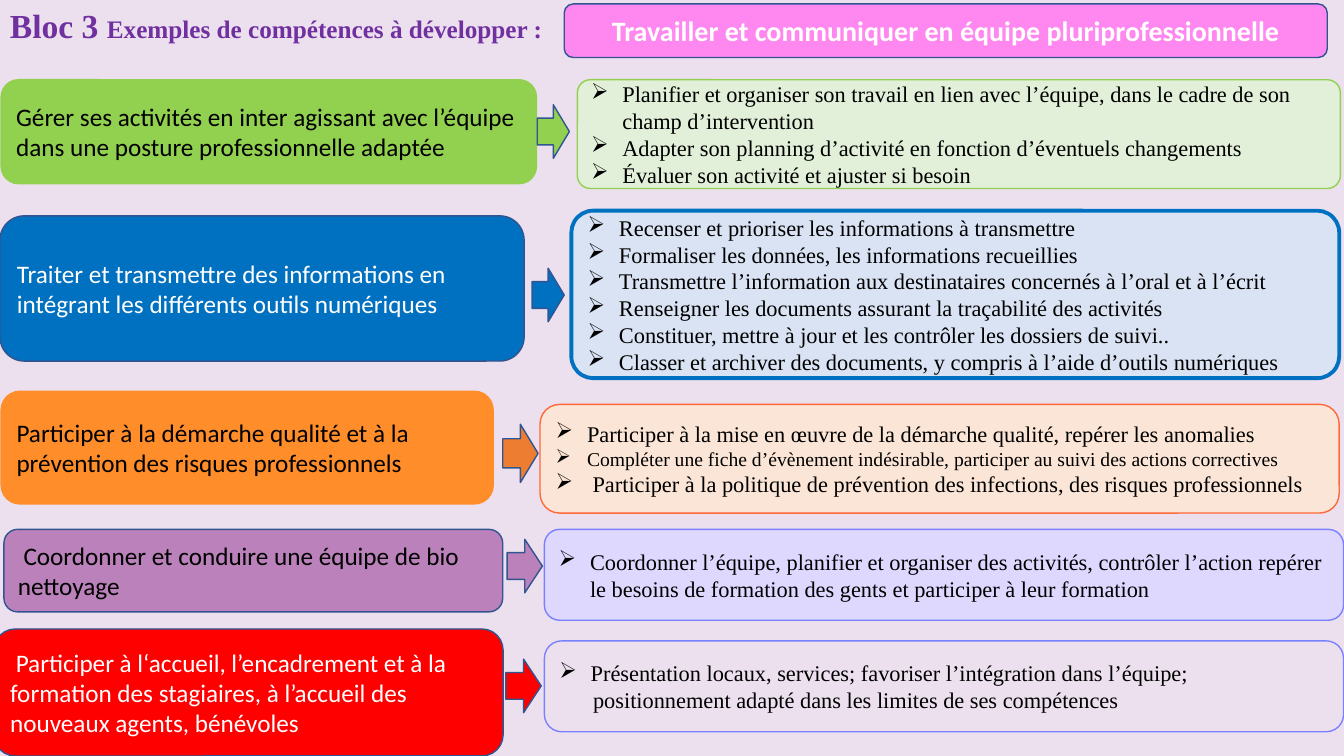
"""Build the Bloc 3 slide: skills on the left, detailed abilities on the right."""
from lxml import etree
from pptx import Presentation, util as u
from pptx.dml.color import RGBColor
from pptx.enum import shapes, text
from pptx.oxml.ns import qn

BLACK = RGBColor(0x00, 0x00, 0x00)
WHITE = RGBColor(0xFF, 0xFF, 0xFF)
BACKGROUND = RGBColor(0xEC, 0xE0, 0xEF)
PURPLE = RGBColor(0x70, 0x30, 0xA0)
PINK = RGBColor(0xFF, 0x87, 0xF0)
NAVY = RGBColor(0x32, 0x54, 0x91)
GREEN = RGBColor(0x92, 0xD0, 0x50)
PALE_GREEN = RGBColor(0xE2, 0xF0, 0xD9)
BLUE = RGBColor(0x00, 0x70, 0xC0)
PALE_BLUE = RGBColor(0xDA, 0xE3, 0xF3)
ORANGE = RGBColor(0xFF, 0x8D, 0x2A)
DARK_ORANGE = RGBColor(0xED, 0x7D, 0x31)
CORAL = RGBColor(0xFF, 0x68, 0x38)
PALE_ORANGE = RGBColor(0xFB, 0xE5, 0xD6)
MAUVE = RGBColor(0xBA, 0x81, 0xBA)
LAVENDER = RGBColor(0xDE, 0xD8, 0xFF)
PERIWINKLE = RGBColor(0x7A, 0x81, 0xFF)
RED = RGBColor(0xFF, 0x00, 0x00)

SERIF, SANS = "Times New Roman", "Calibri"
ROUNDED = shapes.MSO_SHAPE.ROUNDED_RECTANGLE
ARROW = shapes.MSO_SHAPE.RIGHT_ARROW
INDENT = u.Cm(0.79)

prs = Presentation()
prs.slide_width, prs.slide_height = u.Cm(33.87), u.Cm(19.05)
s = prs.slides.add_slide(prs.slide_layouts[6])
s.background.fill.solid()
s.background.fill.fore_color.rgb = BACKGROUND


def add_box(kind, place, fill, line, weight=1, adj=None):
    sp = s.shapes.add_shape(kind, *[u.Cm(v) for v in place])
    sp.shadow.inherit = False
    sp.fill.solid()
    sp.fill.fore_color.rgb = fill
    sp.line.color.rgb = line
    sp.line.width = u.Pt(weight)
    if adj:
        sp.adjustments[0] = adj
    tf = sp.text_frame
    tf.word_wrap = True
    tf.vertical_anchor = text.MSO_ANCHOR.MIDDLE
    return tf


def format_text(p, font, size, color, bold=False, align=text.PP_ALIGN.LEFT):
    p.alignment = align
    for r in p.runs:
        r.font.name = font
        r.font.size = u.Pt(size)
        r.font.color.rgb = color
        r.font.bold = bold


tf = s.shapes.add_textbox(0, 0, u.Cm(14.22), u.Cm(1.27)).text_frame
tf.word_wrap = True
p = tf.paragraphs[0]
for wording in ("Bloc 3 ", "Exemples de compétences à développer :"):
    p.add_run().text = wording
format_text(p, SERIF, 18, PURPLE, bold=True)
p.runs[0].font.size = u.Pt(24)

tf = add_box(ROUNDED, (14.22, 0.1, 19.23, 1.35), PINK, NAVY)
tf.text = "Travailler et communiquer en équipe pluriprofessionnelle"
format_text(tf.paragraphs[0], SANS, 20, WHITE, True, text.PP_ALIGN.CENTER)

skills = [
    ((0.03, 2.01, 13.49, 2.62), GREEN, GREEN, BLACK,
     "Gérer ses activités en inter agissant avec l’équipe dans une posture professionnelle adaptée"),
    ((0, 5.44, 13.21, 3.66), BLUE, NAVY, WHITE,
     "Traiter et transmettre des informations en intégrant les différents outils numériques"),
    ((0.03, 9.86, 12.4, 2.84), ORANGE, ORANGE, BLACK,
     "Participer à la démarche qualité et à la prévention des risques professionnels"),
    ((0.1, 13.34, 12.57, 2.08), MAUVE, NAVY, BLACK,
     " Coordonner et conduire une équipe de bio nettoyage"),
    ((-0.15, 15.85, 12.83, 3.2), RED, NAVY, WHITE,
     " Participer à l‘accueil, l’encadrement et à la formation des stagiaires, "
     "à l’accueil des nouveaux agents, bénévoles"),
]
for place, fill, line, color, wording in skills:
    tf = add_box(ROUNDED, place, fill, line)
    tf.text = wording
    format_text(tf.paragraphs[0], SANS, 18, color)

arrows = [
    ((13.54, 2.64, 0.81, 1.35), GREEN),
    ((13.41, 6.76, 0.81, 1.35), BLUE),
    ((12.67, 10.69, 0.89, 1.47), DARK_ORANGE),
    ((12.78, 13.59, 0.89, 1.35), MAUVE),
    ((12.75, 16.61, 0.89, 1.35), RED),
]
for place, fill in arrows:
    add_box(ARROW, place, fill, NAVY)

abilities = [
    ((14.55, 2.01, 19.23, 2.74), PALE_GREEN, GREEN, 1, 0.12, [
        "Planifier et organiser son travail en lien avec l’équipe, dans le cadre de son champ d’intervention",
        "Adapter son planning d’activité en fonction d’éventuels changements",
        "Évaluer son activité et ajuster si besoin"]),
    ((14.4, 5.31, 19.35, 4.22), PALE_BLUE, BLUE, 2.75, 0.13, [
        "Recenser et prioriser les informations à transmettre",
        "Formaliser les données, les informations recueillies",
        "Transmettre l’information aux destinataires concernés à l’oral et à l’écrit",
        "Renseigner les documents assurant la traçabilité des activités",
        "Constituer, mettre à jour et les contrôler les dossiers de suivi..",
        "Classer et archiver des documents, y compris à l’aide d’outils numériques"]),
    ((13.61, 10.19, 20.14, 2.74), PALE_ORANGE, CORAL, 1, 0.18, [
        "Participer à la mise en œuvre de la démarche qualité, repérer les anomalies",
        "Compléter une fiche d’évènement indésirable, participer au suivi des actions correctives",
        " Participer à la politique de prévention des infections, des risques professionnels"]),
    ((13.72, 13.34, 20.14, 2.29), LAVENDER, PERIWINKLE, 1, None, [
        "Coordonner l’équipe, planifier et organiser des activités, contrôler l’action repérer "
        "le besoins de formation des gents et participer à leur formation"]),
    ((13.72, 16.15, 20.14, 2.29), BACKGROUND, PERIWINKLE, 1, 0.19, [
        "Présentation locaux, services; favoriser l’intégration dans l’équipe;",
        "positionnement adapté dans les limites de ses compétences"]),
]
for place, fill, line, weight, adj, items in abilities:
    tf = add_box(ROUNDED, place, fill, line, weight, adj)
    tf.margin_top = tf.margin_bottom = 0
    tf.text = "\n".join(items)
    for p in tf.paragraphs:
        format_text(p, SERIF, 14 if p.text.startswith("Compléter") else 16, BLACK)
        pPr = p._p.get_or_add_pPr()
        if p.text.startswith("positionnement"):
            pPr.set("marL", str(u.Cm(0.85)))
            continue
        pPr.set("marL", str(INDENT))
        pPr.set("indent", str(-INDENT))
        etree.SubElement(pPr, qn("a:buFont")).set("typeface", "Wingdings")
        etree.SubElement(pPr, qn("a:buChar")).set("char", "Ø")

prs.save("out.pptx")
